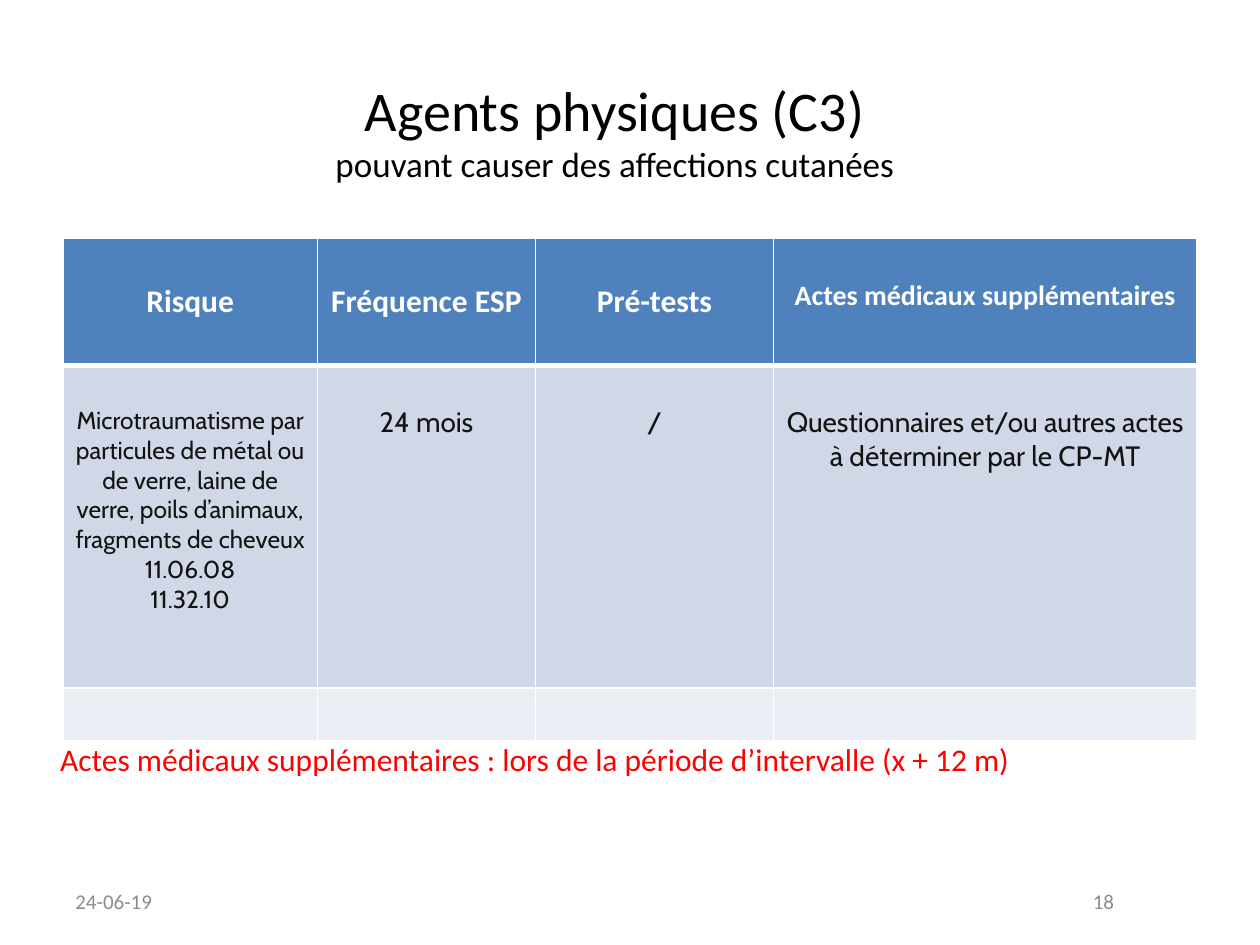
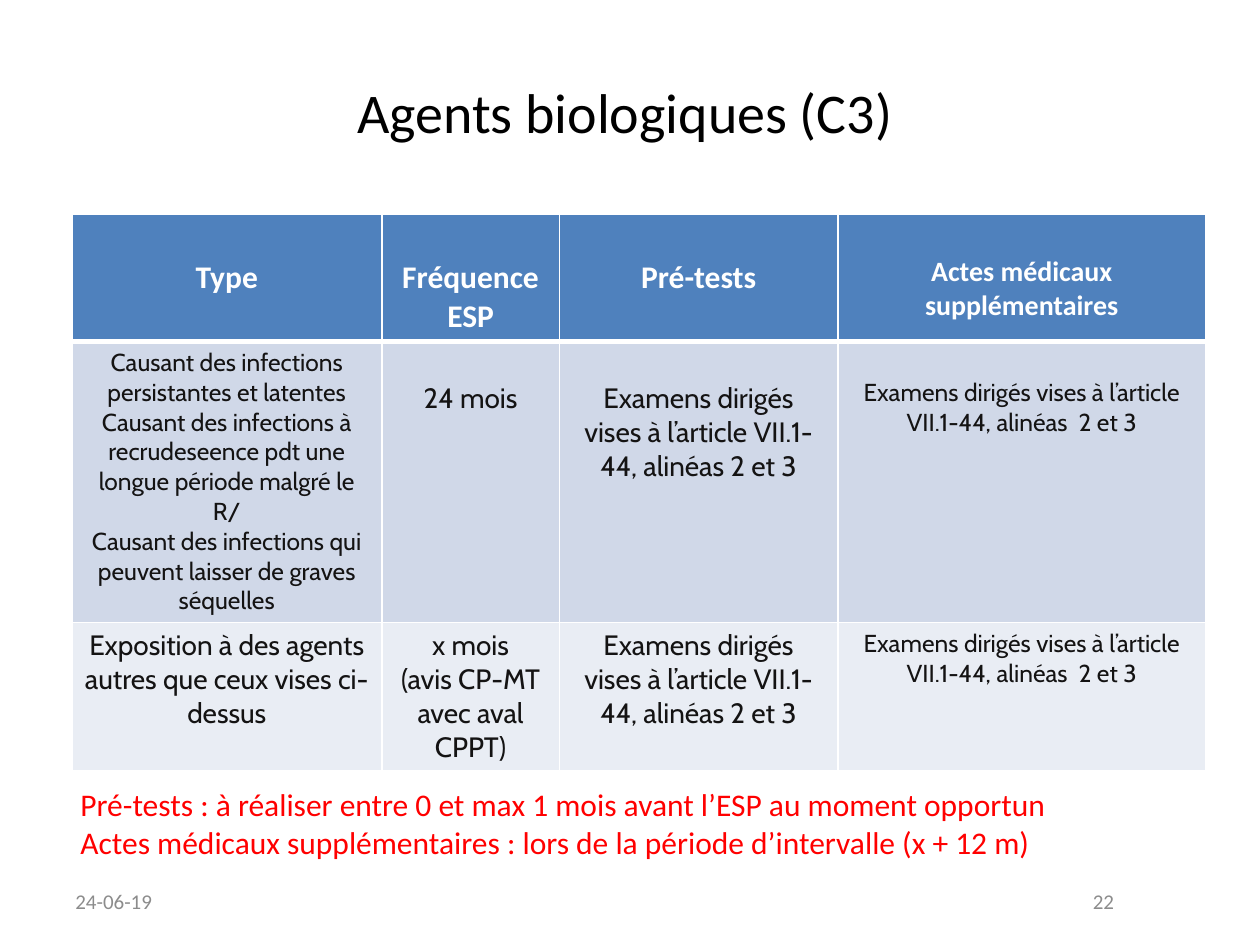
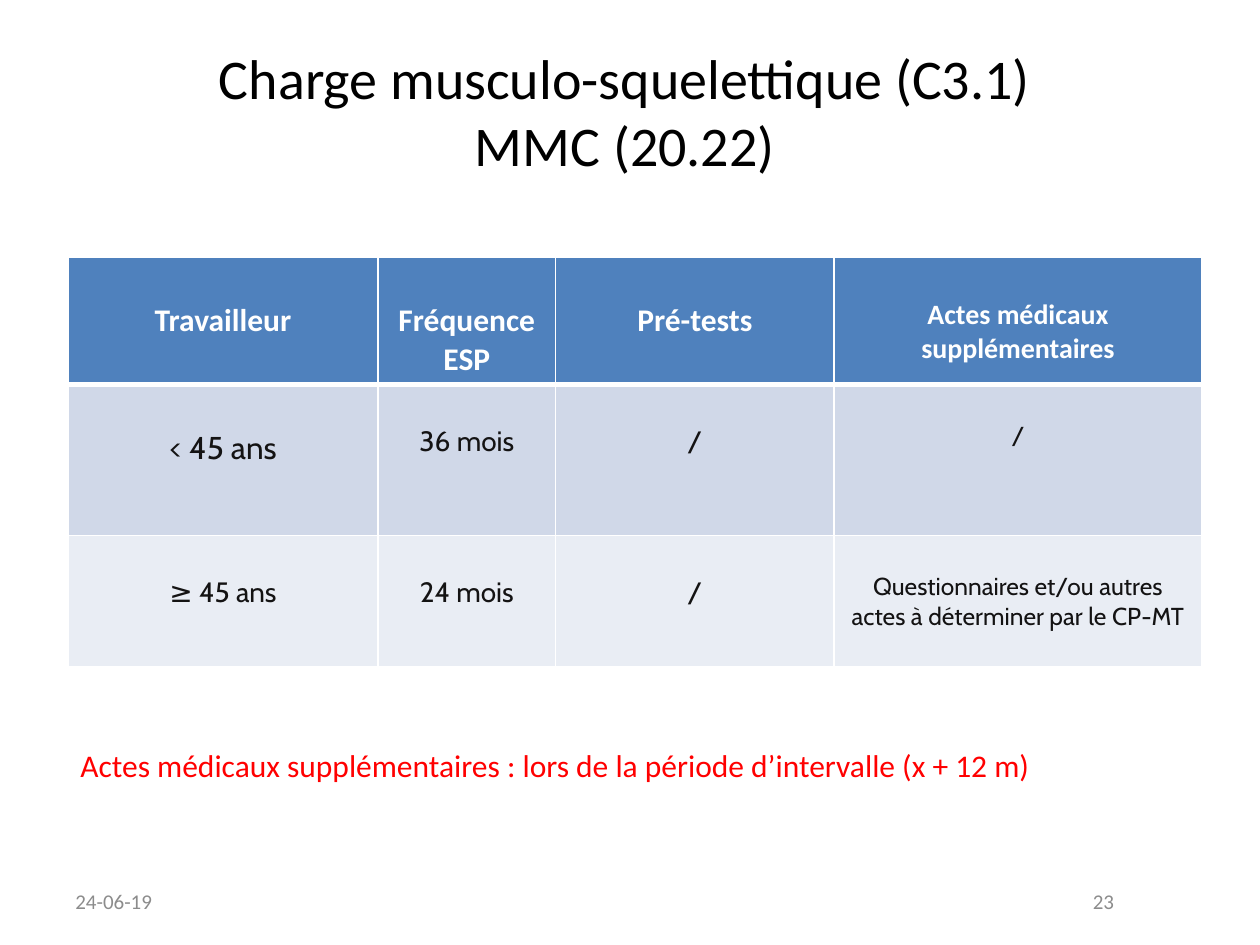
from dataclasses import dataclass

from lxml.etree import SubElement
from pptx import Presentation
from pptx.dml.color import RGBColor
from pptx.enum.text import MSO_ANCHOR, PP_ALIGN
from pptx.oxml.ns import qn
from pptx.util import Inches, Pt

LEFT, CENTER, RIGHT = PP_ALIGN.LEFT, PP_ALIGN.CENTER, PP_ALIGN.RIGHT
TOP, MIDDLE = MSO_ANCHOR.TOP, MSO_ANCHOR.MIDDLE


@dataclass(frozen=True)
class Theme:
    heading_font: str = "Calibri"
    body_font: str = "Cabin"
    black: str = "000000"
    white: str = "FFFFFF"
    ink: str = "141313"
    red: str = "FF0000"
    gray: str = "8C8C8C"
    header_fill: str = "4F81BD"
    row_fills: tuple = ("D0D8E8", "E9EDF4")
    title: int = 32
    subtitle: int = 20
    large: int = 18
    medium: int = 16
    small: int = 14
    footer: int = 12
    thin_border: int = 1
    thick_border: int = 3
    line_height: float = 1.22
    cell_margin: float = 0.05


THEME = Theme()
BIG, MID, SMALL = THEME.large, THEME.medium, THEME.small

# Wording shared by several pages
DATE = "24-06-19"
EXTRA_ACTS = "Actes médicaux supplémentaires"
EXTRA_NOTE = f"{EXTRA_ACTS} : lors de la période d’intervalle (x + 12 m)"
PRETEST_NOTE = "Pré-tests : à réaliser entre 0 et max 1 mois avant l’ESP au moment opportun"
SURVEY = "Questionnaires et/ou autres actes à déterminer par le CP-MT"
EXAMS = "Examens dirigés vises à l’article VII.1-44, alinéas 2 et 3"
EXAMS_EXTRA = "Examens dirigés vises à l’article VII.1-44, alinéas  2 et 3"
NARROW_COLUMNS = (2.46, 1.41, 2.21, 2.92)

# Each body cell: lines, type size, size of the line left free above (0 for none)
PAGES = [
    {
        "number": 18,
        "title": [("Agents physiques (C3)", THEME.title),
                  ("pouvant causer des affections cutanées", THEME.subtitle)],
        "title_at": (1.22, 0.75),
        "table_at": (0.5, 1.89),
        "columns": (2.02, 1.73, 1.89, 3.36),
        "heights": (1.01, 2.56, 0.42),
        "first_heading": "Risque",
        "rows": [
            [(["Microtraumatisme par particules de métal ou de verre, laine de verre, "
               "poils d’animaux, fragments de cheveux", "11.06.08", "11.32.10"], SMALL, MID),
             (["24 mois"], MID, MID), (["/"], MID, MID), ([SURVEY], MID, MID)],
            [([], MID, 0)] * 4,
        ],
        "note_at": (0.38, 5.82),
        "notes": [EXTRA_NOTE],
    },
    {
        "number": 22,
        "title": [("Agents biologiques (C3)", THEME.title)],
        "title_at": (1.3, 0.6),
        "table_at": (0.57, 1.7),
        "columns": NARROW_COLUMNS,
        "heights": (1.01, 2.23, 1.18),
        "first_heading": "Type",
        "rows": [
            [(["Causant des infections persistantes et latentes",
               "Causant des infections à recrudeseence pdt une longue période malgré le R/",
               "Causant des infections qui peuvent laisser de graves séquelles"], SMALL, 0),
             (["24 mois"], MID, MID), ([EXAMS], MID, MID), ([EXAMS_EXTRA], SMALL, SMALL)],
            [(["Exposition à des agents autres que ceux vises ci-dessus"], MID, 0),
             (["x mois", "(avis CP-MT avec aval CPPT)"], MID, 0),
             ([EXAMS], MID, 0), ([EXAMS_EXTRA], SMALL, 0)],
        ],
        "note_at": (0.54, 6.18),
        "notes": [PRETEST_NOTE, EXTRA_NOTE],
    },
    {
        "number": 23,
        "title": [("Charge musculo-squelettique (C3.1)", THEME.title),
                  ("MMC (20.22)", THEME.title)],
        "title_at": (1.3, 0.6),
        "table_at": (0.54, 2.04),
        "columns": NARROW_COLUMNS,
        "heights": (1.01, 1.2, 1.04),
        "first_heading": "Travailleur",
        "rows": [
            [(["< 45 ans"], BIG, BIG), (["36 mois"], MID, MID),
             (["/"], MID, MID), (["/"], SMALL, SMALL)],
            [(["≥ 45 ans"], MID, MID), (["24 mois"], MID, MID),
             (["/"], MID, MID), ([SURVEY], SMALL, SMALL)],
        ],
        "note_at": (0.54, 5.87),
        "notes": [EXTRA_NOTE],
    },
]


def write_lines(frame, lines, align, color, font=THEME.heading_font, bold=False):
    """Write one paragraph for each (text, size) pair."""
    for index, (text, size) in enumerate(lines):
        para = frame.paragraphs[0] if index == 0 else frame.add_paragraph()
        para.alignment = align
        span = para.add_run()
        span.text = text
        formats = {"name": font, "size": Pt(size), "bold": bold}
        for name, value in formats.items():
            setattr(span.font, name, value)
        span.font.color.rgb = RGBColor.from_string(color)


def add_text(page, place, lines, align, color, anchor=MIDDLE):
    box = page.shapes.add_textbox(*map(Inches, place))
    box.text_frame.word_wrap = True
    box.text_frame.vertical_anchor = anchor
    write_lines(box.text_frame, lines, align, color)


def set_borders(cell, top, bottom):
    properties = cell._tc.get_or_add_tcPr()
    widths = {"L": THEME.thin_border, "R": THEME.thin_border, "T": top, "B": bottom}
    for side, width in widths.items():
        line = SubElement(properties, qn(f"a:ln{side}"), w=str(Pt(width)))
        fill = SubElement(line, qn("a:solidFill"))
        SubElement(fill, qn("a:srgbClr"), val=THEME.white)


def fill_cell(cell, content, row):
    lines, size, gap = content
    is_header = row == 0
    thin, thick = THEME.thin_border, THEME.thick_border
    set_borders(cell, thick if row == 1 else thin, thick if is_header else thin)
    cell.fill.solid()
    fill = THEME.header_fill if is_header else THEME.row_fills[row - 1]
    cell.fill.fore_color.rgb = RGBColor.from_string(fill)
    # The free line above the text becomes part of the top margin
    cell.margin_top = Inches(THEME.cell_margin) + Pt(gap * THEME.line_height)
    cell.margin_bottom = Inches(THEME.cell_margin)
    write_lines(cell.text_frame, [(text, size) for text in lines], CENTER,
                THEME.white if is_header else THEME.ink,
                THEME.heading_font if is_header else THEME.body_font, is_header)


def add_risk_table(page, content):
    headings = [([text], BIG, BIG) for text in
                (content["first_heading"], "Fréquence ESP", "Pré-tests")]
    rows = [headings + [([EXTRA_ACTS], MID, MID)]] + content["rows"]
    columns, heights = content["columns"], content["heights"]
    place = (*content["table_at"], sum(columns), sum(heights))
    table = page.shapes.add_table(len(rows), len(columns), *map(Inches, place)).table
    table.horz_banding = False
    for column, width in zip(table.columns, columns):
        column.width = Inches(width)
    for row, height in zip(table.rows, heights):
        row.height = Inches(height)
    for row, cells in enumerate(rows):
        for column, cell_content in enumerate(cells):
            fill_cell(table.cell(row, column), cell_content, row)


def add_footer(page, number):
    add_text(page, (0.5, 6.95, 2.33, 0.4), [(DATE, THEME.footer)], LEFT, THEME.gray)
    add_text(page, (7.17, 6.95, 1.77, 0.4), [(str(number), THEME.footer)], RIGHT, THEME.gray)


def add_page(deck, content):
    page = deck.slides.add_slide(deck.slide_layouts[6])
    add_text(page, (*content["title_at"], 7.32, 0.56), content["title"], CENTER, THEME.black)
    add_risk_table(page, content)
    add_footer(page, content["number"])
    notes = [(text, BIG) for text in content["notes"]]
    add_text(page, (*content["note_at"], 9, 0.71), notes, LEFT, THEME.red, TOP)


def main():
    deck = Presentation()
    deck.slide_width, deck.slide_height = Inches(10), Inches(7.5)
    for content in PAGES:
        add_page(deck, content)
    deck.save("out.pptx")


if __name__ == "__main__":
    main()
